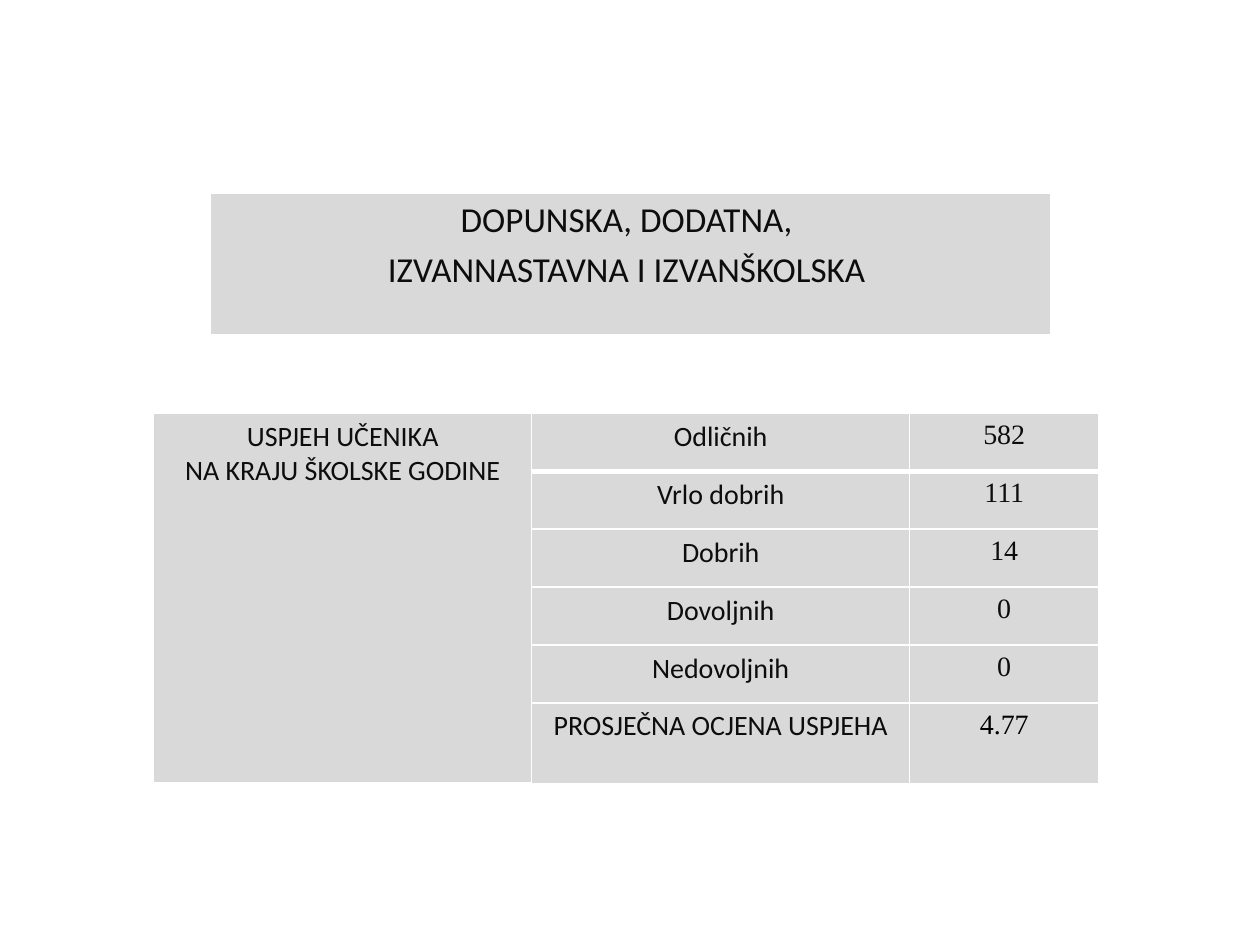
import pptx
import pptx.util
import pptx.dml.color
import pptx.enum.text
import pptx.oxml.ns
import lxml.etree

INK, GRAY, WHITE = "0D0D0D", "D9D9D9", "FFFFFF"
THIN, THICK = 0.96, 3
SANS, SERIF = "Calibri", "Times New Roman"


def tint(code):
    return pptx.dml.color.RGBColor.from_string(code)


def write(frame, text, size=16, font=SANS, color=INK, gap=0):
    frame.word_wrap = True
    for i, line in enumerate(text.split("\n")):
        para = frame.paragraphs[0] if i == 0 else frame.add_paragraph()
        para.alignment = pptx.enum.text.PP_ALIGN.CENTER
        para.space_before = pptx.util.Pt(gap if i else 0)
        run = para.add_run()
        run.text = line
        run.font.size = pptx.util.Pt(size)
        run.font.name = font
        run.font.color.rgb = tint(color)


class Deck:
    def __init__(self, wide, high):
        self.file = pptx.Presentation()
        self.file.slide_width = pptx.util.Inches(wide)
        self.file.slide_height = pptx.util.Inches(high)
        self.unit = self.file.slide_width / 100
        self.slide = self.file.slides.add_slide(self.file.slide_layouts[6])

    def span(self, count):
        return round(count * self.unit)

    def edge(self, cell, **sides):
        props = cell._tc.get_or_add_tcPr()
        name = pptx.oxml.ns.qn
        for side in "LRTB":
            width = pptx.util.Pt(sides.get(side, THIN))
            line = lxml.etree.SubElement(props, name("a:ln" + side), w=str(width))
            fill = lxml.etree.SubElement(line, name("a:solidFill"))
            lxml.etree.SubElement(fill, name("a:srgbClr"), val=WHITE)

    def cell(self, cell, text="", sides=None, inset=0.7, **style):
        self.edge(cell, **(sides or {}))
        cell.fill.solid()
        cell.fill.fore_color.rgb = tint(GRAY)
        cell.margin_left = cell.margin_right = self.span(inset)
        cell.margin_top = cell.margin_bottom = self.span(0.5)
        if text:
            write(cell.text_frame, text, **style)

    def table(self, left, top, cols, rows):
        frame = self.slide.shapes.add_table(
            len(rows), len(cols), self.span(left), self.span(top),
            self.span(sum(cols)), self.span(sum(rows)))
        grid = frame.table
        for col, wide in zip(grid.columns, cols):
            col.width = self.span(wide)
        for row, high in zip(grid.rows, rows):
            row.height = self.span(high)
        return grid


def main():
    marks = [
        ("Odličnih", "582"),
        ("Vrlo dobrih", "111"),
        ("Dobrih", "14"),
        ("Dovoljnih", "0"),
        ("Nedovoljnih", "0"),
        ("PROSJEČNA OCJENA USPJEHA", "4.77"),
    ]
    last = len(marks) - 1
    deck = Deck(10, 7.5)

    grades = deck.table(12.2, 32.8, [30, 30, 15], [4.6] * last + [6.4])
    grades.cell(0, 0).merge(grades.cell(last, 0))
    deck.cell(grades.cell(0, 0), "USPJEH UČENIKA\nNA KRAJU ŠKOLSKE GODINE",
              sides={"B": THICK})
    for i, (label, value) in enumerate(marks):
        sides = {0: {"B": THICK}, 1: {"T": THICK}}.get(i)
        deck.cell(grades.cell(i, 1), label, sides)
        deck.cell(grades.cell(i, 2), value, sides, font=SERIF,
                  color="000000" if i == last else INK)

    head = deck.table(16.7, 15.3, [66.7], [11.4])
    deck.cell(head.cell(0, 0),
              "DOPUNSKA, DODATNA, \nIZVANNASTAVNA I IZVANŠKOLSKA ",
              {"B": THICK}, inset=1, size=20, gap=4)

    deck.file.save("out.pptx")


if __name__ == "__main__":
    main()
